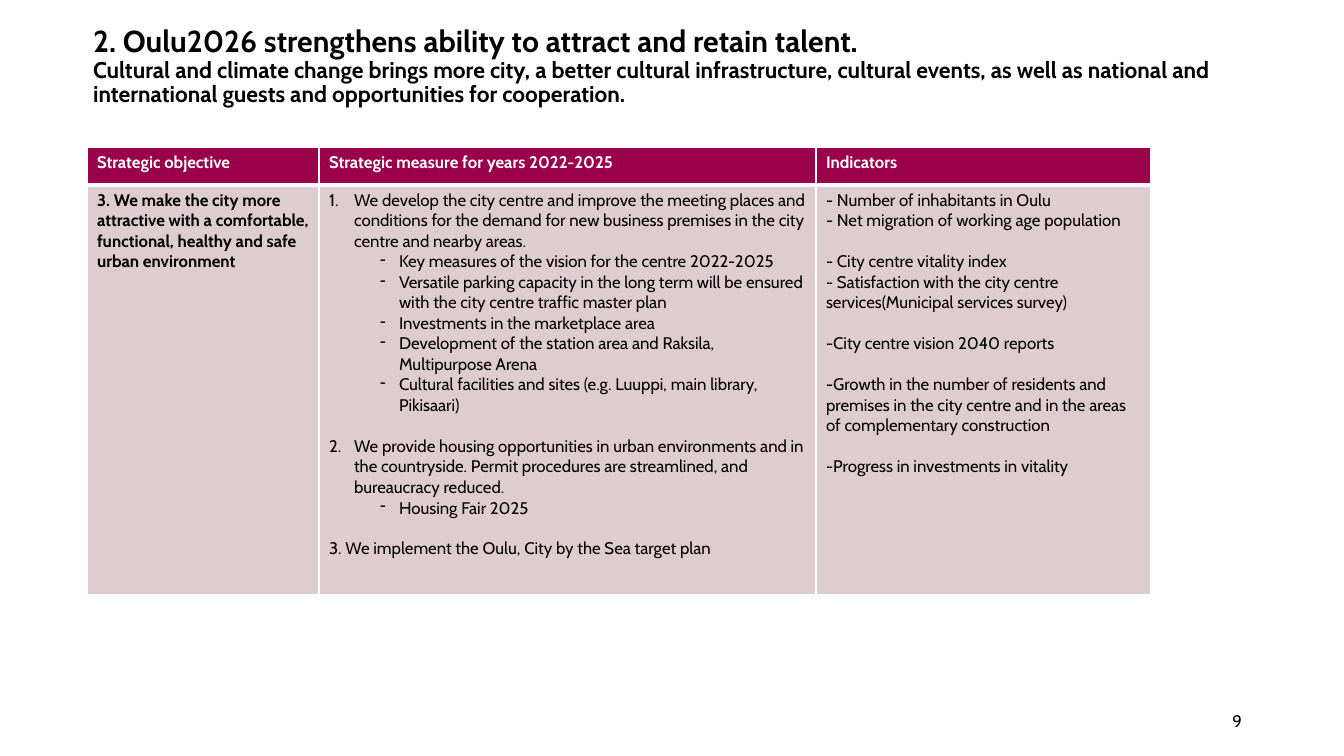
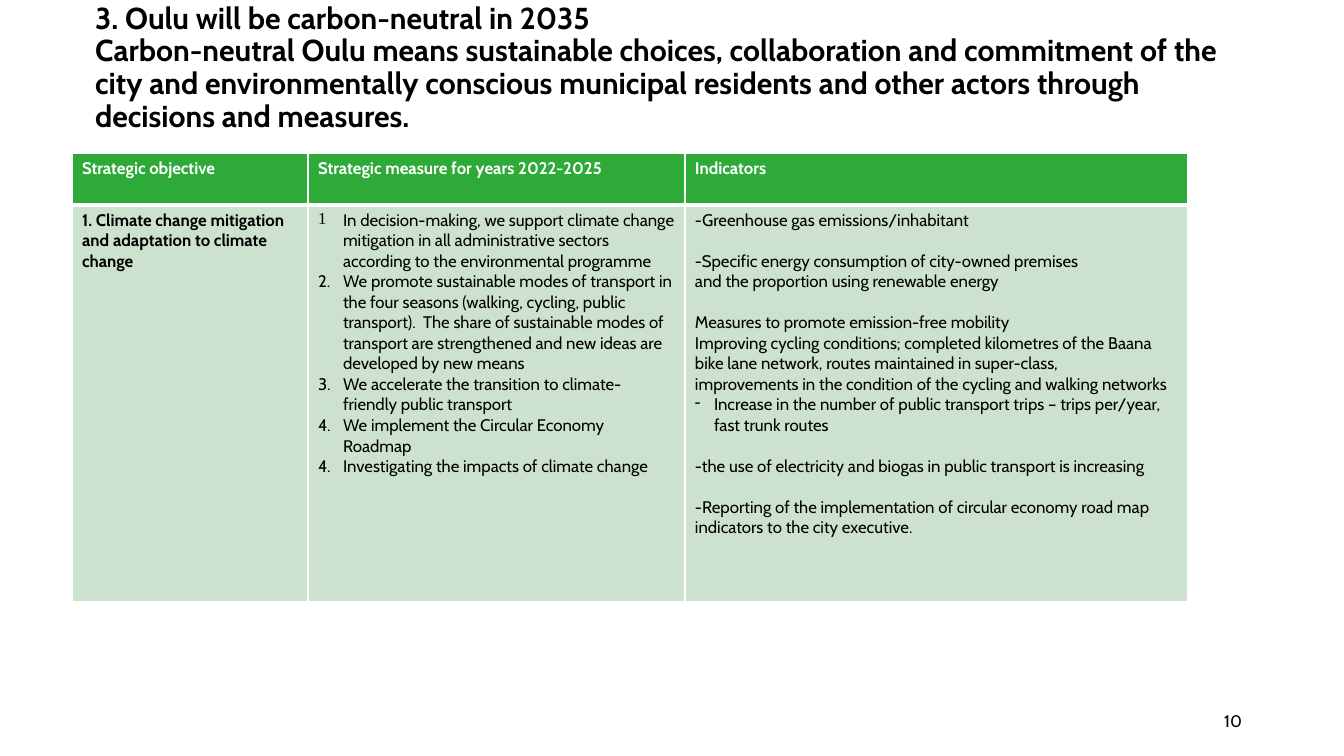
from lxml import etree
from pptx import Presentation
from pptx.dml.color import RGBColor
from pptx.enum.text import MSO_ANCHOR, MSO_AUTO_SIZE, PP_ALIGN
from pptx.oxml.ns import qn
from pptx.util import Emu, Pt

FONT = "Cabin"
BLACK = RGBColor(0x00, 0x00, 0x00)
WHITE = RGBColor(0xFF, 0xFF, 0xFF)
PLUM = RGBColor(0x9B, 0x00, 0x4B)
ROSE = RGBColor(0xDE, 0xCC, 0xD0)
GREEN = RGBColor(0x2D, 0xAA, 0x37)
MINT = RGBColor(0xCD, 0xE2, 0xCE)

PX_PER_INCH = 100.8
SLIDE_SIZE = (1344, 756)
NUMBER_BOX = (950, 701, 302, 40)
TITLE_WIDTH = 1159
LINE = 14.6  # height of one 12 pt line, in points

HEADERS = ["Strategic objective", "Strategic measure for years 2022-2025", "Indicators"]

# List style: left indent and hanging indent in px, outline level, bullet tag, bullet attributes
LIST_STYLES = {
    "1": (25, 25, 0, "a:buChar", {"char": "1"}),
    "1.": (25, 25, 0, "a:buAutoNum", {"type": "arabicPeriod"}),
    "2.": (25, 25, 0, "a:buAutoNum", {"type": "arabicPeriod", "startAt": "2"}),
    "4.": (25, 25, 0, "a:buAutoNum", {"type": "arabicPeriod", "startAt": "4"}),
    "-": (19, 19, 0, "a:buChar", {"char": "-"}),
    "sub": (70, 19, 1, "a:buChar", {"char": "-"}),
}

# A cell is a list of groups, set one line apart; a line is text or (list style, text).
SLIDES = [
    {
        "number": 9,
        "title": [
            ("2. Oulu2026 strengthens ability to attract and retain talent.", 21.6),
            ("Cultural and climate change brings more city, a better cultural infrastructure, "
             "cultural events, as well as national and international guests and opportunities "
             "for cooperation.", 16.2),
        ],
        "title_at": (83, 26, TITLE_WIDTH, 82),
        "table_at": (87, 147),
        "cols": [232, 497, 335],
        "rows": [38, 410],
        "colours": (PLUM, ROSE),
        "cells": [
            [["3. We make the city more attractive with a comfortable, functional, healthy "
              "and safe urban environment"]],
            [
                [
                    ("1.", "We develop the city centre and improve the meeting places and "
                           "conditions for the demand for new business premises in the city "
                           "centre and nearby areas."),
                    ("sub", "Key measures of the vision for the centre 2022-2025"),
                    ("sub", "Versatile parking capacity in the long term will be ensured with "
                            "the city centre traffic master plan"),
                    ("sub", "Investments in the marketplace area"),
                    ("sub", "Development of the station area and Raksila, Multipurpose Arena"),
                    ("sub", "Cultural facilities and sites (e.g. Luuppi, main library, Pikisaari)"),
                ],
                [
                    ("2.", "We provide housing opportunities in urban environments and in the "
                           "countryside. Permit procedures are streamlined, and bureaucracy "
                           "reduced."),
                    ("sub", "Housing Fair 2025"),
                ],
                ["3. We implement the Oulu, City by the Sea target plan"],
            ],
            [
                ["- Number of inhabitants in Oulu",
                 "- Net migration of working age population"],
                ["- City centre vitality index",
                 "- Satisfaction with the city centre services(Municipal services survey)"],
                ["-City centre vision 2040 reports"],
                ["-Growth in the number of residents and premises in the city centre and in "
                 "the areas of complementary construction"],
                ["-Progress in investments in vitality"],
            ],
        ],
    },
    {
        "number": 10,
        "title": [
            ("3. Oulu will be carbon-neutral in 2035", 21.6),
            ("Carbon-neutral Oulu means sustainable choices, collaboration and commitment of "
             "the city and environmentally conscious municipal residents and other actors "
             "through decisions and measures.", 21.6),
        ],
        "title_at": (85, 3, TITLE_WIDTH, 132),
        "table_at": (72, 153),
        "cols": [236, 377, 503],
        "rows": [52, 397],
        "colours": (GREEN, MINT),
        "cells": [
            [["1. Climate change mitigation and adaptation to climate change"]],
            [[
                ("1", "In decision-making, we support climate change mitigation in all "
                      "administrative sectors according to the environmental programme"),
                ("2.", "We promote sustainable modes of transport in the four seasons (walking, "
                       "cycling, public transport).  The share of sustainable modes of "
                       "transport are strengthened and new ideas are developed by new means"),
                ("2.", "We accelerate the transition to climate-friendly public transport"),
                ("2.", "We implement the Circular Economy Roadmap"),
                ("4.", "Investigating the impacts of climate change"),
            ]],
            [
                ["-Greenhouse gas emissions/inhabitant"],
                ["-Specific energy consumption of city-owned premises",
                 "and the proportion using renewable energy"],
                ["Measures to promote emission-free mobility",
                 "Improving cycling conditions; completed kilometres of the Baana bike lane "
                 "network, routes maintained in super-class,",
                 "improvements in the condition of the cycling and walking networks",
                 ("-", "Increase in the number of public transport trips – trips per/year, "
                       "fast trunk routes")],
                ["-the use of electricity and biogas in public transport is increasing"],
                ["-Reporting of the implementation of circular economy road map indicators to "
                 "the city executive."],
            ],
        ],
    },
]


def px(n):
    return Emu(round(n * 914400 / PX_PER_INCH))


def add_run(p, text, size=12, bold=False, colour=BLACK):
    r = p.add_run()
    r.text = text
    for name, value in {"name": FONT, "size": Pt(size), "bold": bold}.items():
        setattr(r.font, name, value)
    r.font.color.rgb = colour


def next_paragraph(tf, index):
    return tf.add_paragraph() if index else tf.paragraphs[0]


def set_list_style(p, style):
    left, hanging, level, tag, attrs = LIST_STYLES[style]
    p.level = level
    pPr = p._p.get_or_add_pPr()
    pPr.set("marL", str(px(left)))
    pPr.set("indent", str(-px(hanging)))
    etree.SubElement(pPr, qn(tag), attrs)


def set_borders(cell, widths):
    """Draw white borders; widths are points for left, right, top and bottom."""
    tcPr = cell._tc.get_or_add_tcPr()
    for i, (side, width) in enumerate(zip("LRTB", widths)):
        ln = etree.Element(qn(f"a:ln{side}"), {"w": str(Pt(width))})
        fill = etree.SubElement(ln, qn("a:solidFill"))
        etree.SubElement(fill, qn("a:srgbClr"), {"val": str(WHITE)})
        tcPr.insert(i, ln)


def fill_cell(cell, groups, fill, borders, **font):
    cell.fill.solid()
    cell.fill.fore_color.rgb = fill
    set_borders(cell, borders)
    index = 0
    for group in groups:
        for i, line in enumerate(group):
            style, text = line if isinstance(line, tuple) else (None, line)
            p = next_paragraph(cell.text_frame, index)
            if index and i == 0:
                p.space_before = Pt(LINE)
            if style:
                set_list_style(p, style)
            add_run(p, text, **font)
            index += 1


def add_title(s, lines, box):
    sp = s.shapes.title
    sp.left, sp.top, sp.width, sp.height = map(px, box)
    tf = sp.text_frame
    for name, value in {"word_wrap": True, "auto_size": MSO_AUTO_SIZE.NONE,
                        "vertical_anchor": MSO_ANCHOR.TOP,
                        "margin_top": 0, "margin_bottom": 0}.items():
        setattr(tf, name, value)
    for i, (text, size) in enumerate(lines):
        p = next_paragraph(tf, i)
        for name, value in {"alignment": PP_ALIGN.LEFT, "line_spacing": 0.9,
                            "space_before": Pt(0)}.items():
            setattr(p, name, value)
        add_run(p, text, size, bold=True)


def add_strategy_table(s, data):
    cols, rows = data["cols"], data["rows"]
    box = (*data["table_at"], sum(cols), sum(rows))
    table = s.shapes.add_table(len(rows), len(cols), *map(px, box)).table
    table.horz_banding = False
    for row, height in zip(table.rows, rows):
        row.height = px(height)
    head_fill, body_fill = data["colours"]
    for i, (width, header, groups) in enumerate(zip(cols, HEADERS, data["cells"])):
        table.columns[i].width = px(width)
        fill_cell(table.cell(0, i), [[header]], head_fill, (1, 1, 1, 3),
                  bold=True, colour=WHITE)
        fill_cell(table.cell(1, i), groups, body_fill, (1, 1, 3, 1), bold=i == 0)


def add_slide_number(s, number):
    tf = s.shapes.add_textbox(*map(px, NUMBER_BOX)).text_frame
    tf.word_wrap = True
    tf.vertical_anchor = MSO_ANCHOR.MIDDLE
    p = tf.paragraphs[0]
    p.alignment = PP_ALIGN.RIGHT
    add_run(p, str(number))


def main():
    prs = Presentation()
    prs.slide_width, prs.slide_height = map(px, SLIDE_SIZE)
    for data in SLIDES:
        s = prs.slides.add_slide(prs.slide_layouts[5])
        add_title(s, data["title"], data["title_at"])
        add_strategy_table(s, data)
        add_slide_number(s, data["number"])
    prs.save("out.pptx")


if __name__ == "__main__":
    main()
